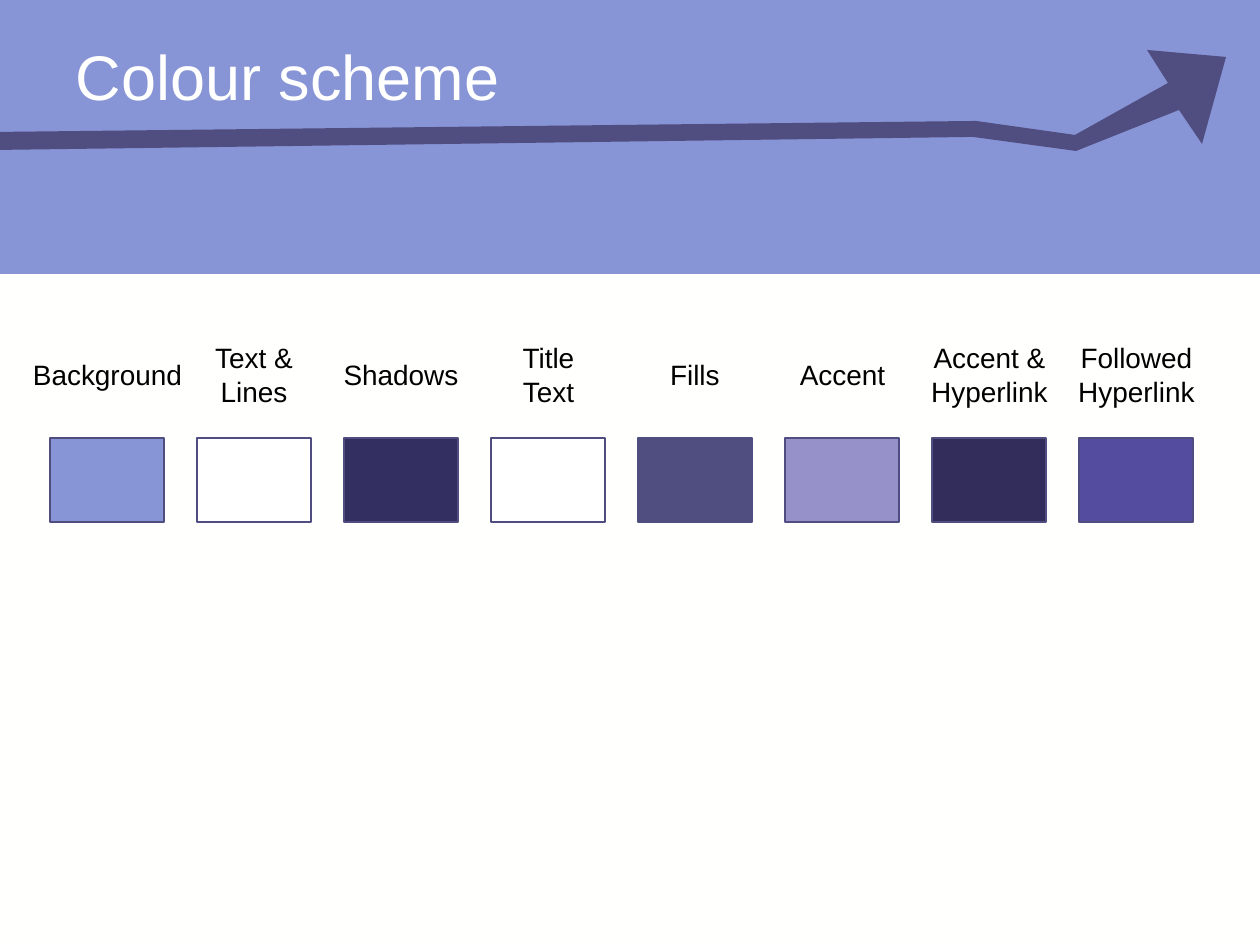
"""Build the colour scheme slide: a title, a rising arrow and eight labelled swatches."""
from dataclasses import dataclass

from pptx import Presentation
from pptx import util as u
from pptx.dml.color import RGBColor
from pptx.enum import shapes, text


@dataclass(frozen=True)
class Theme:
    font: str = "Arial"
    title_size: int = 36
    label_size: int = 16
    background: str = "8794D5"
    white: str = "FFFFFF"
    panel: str = "FFFFFE"
    black: str = "000000"
    shade: str = "342F61"
    slate: str = "504D80"
    lilac: str = "9791CA"
    indigo: str = "322D5A"
    violet: str = "544C9E"


theme = Theme()
SCALE = u.Inches(1) / 126


def px(count):
    return u.Emu(round(count * SCALE))


def write(frame, words, *, size, colour, align, wrap):
    frame.text = words
    frame.word_wrap = wrap
    frame.auto_size = text.MSO_AUTO_SIZE.NONE
    frame.vertical_anchor = text.MSO_ANCHOR.MIDDLE
    for para in frame.paragraphs:
        para.alignment = align
        for span in para.runs:
            span.font.name = theme.font
            span.font.size = u.Pt(size)
            span.font.color.rgb = RGBColor.from_string(colour)


deck = Presentation()
deck.slide_width, deck.slide_height = px(1260), px(945)
page = deck.slides.add_slide(deck.slide_layouts[5])
page.background.fill.solid()
page.background.fill.fore_color.rgb = RGBColor.from_string(theme.background)

title = page.shapes.title
title.left, title.top, title.width, title.height = px(63), px(35), px(1143), px(80)
write(title.text_frame, "Colour scheme", size=theme.title_size,
      colour=theme.white, align=text.PP_ALIGN.LEFT, wrap=True)

outline = page.shapes.build_freeform(0, 150, scale=SCALE)
outline.add_line_segments([
    (973, 137), (1076, 151), (1179, 110), (1202, 144), (1226, 57), (1147, 50),
    (1168, 83), (1075, 135), (976, 121), (0, 132),
])
arrow = outline.convert_to_shape()
arrow.shadow.inherit = False
arrow.fill.solid()
arrow.fill.fore_color.rgb = RGBColor.from_string(theme.slate)
arrow.line.fill.background()

SWATCH_LEFT, SWATCH_TOP, SWATCH_WIDTH, SWATCH_HEIGHT = 50, 438, 114, 84
SWATCH_STEP = 147
LABEL_MIDDLE = 374
swatches = [
    ("Background", 175, theme.background),
    ("Text &\nLines", 106, theme.white),
    ("Shadows", 140, theme.shade),
    ("Title\vText", 79, theme.white),
    ("Fills", 74, theme.slate),
    ("Accent", 111, theme.lilac),
    ("Accent &\nHyperlink", 141, theme.indigo),
    ("Followed\nHyperlink", 141, theme.violet),
]

rectangles = [(0, 275, 1260, 670, theme.panel, theme.white)]
for index, (label, width, colour) in enumerate(swatches):
    rectangles.append((SWATCH_LEFT + index * SWATCH_STEP, SWATCH_TOP,
                       SWATCH_WIDTH, SWATCH_HEIGHT, colour, theme.slate))

for left, top, width, height, colour, border in rectangles:
    box = page.shapes.add_shape(shapes.MSO_SHAPE.RECTANGLE,
                                px(left), px(top), px(width), px(height))
    box.shadow.inherit = False
    box.fill.solid()
    box.fill.fore_color.rgb = RGBColor.from_string(colour)
    box.line.color.rgb = RGBColor.from_string(border)
    box.line.width = u.Pt(0.75)

for index, (label, width, colour) in enumerate(swatches):
    centre = SWATCH_LEFT + index * SWATCH_STEP + SWATCH_WIDTH // 2
    height = 47 if len(label.splitlines()) == 1 else 81
    box = page.shapes.add_textbox(px(centre - width // 2), px(LABEL_MIDDLE - height // 2),
                                  px(width), px(height))
    write(box.text_frame, label, size=theme.label_size,
          colour=theme.black, align=text.PP_ALIGN.CENTER, wrap=False)

deck.save("out.pptx")
